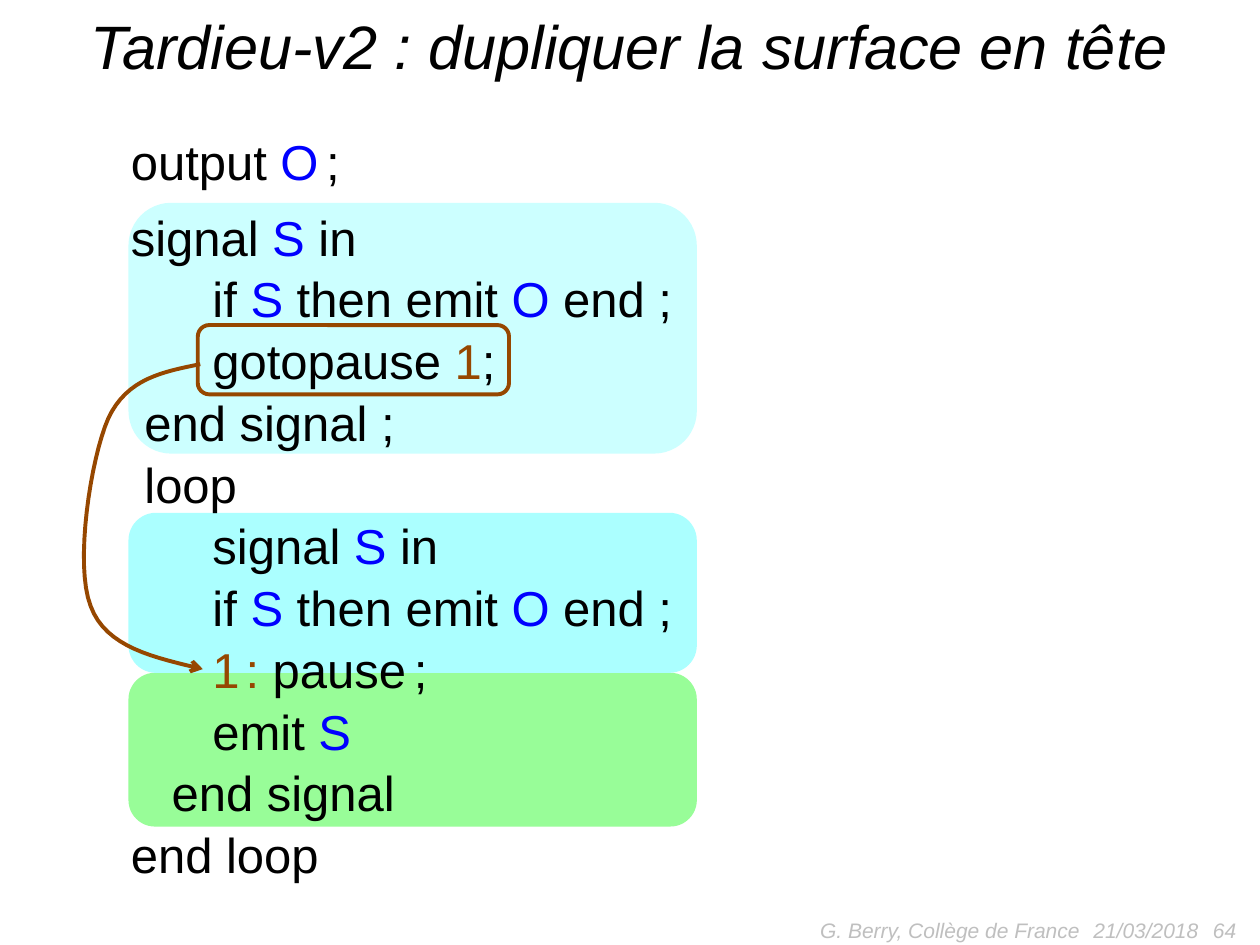
from lxml.etree import SubElement
from pptx import Presentation
from pptx.dml.color import RGBColor
from pptx.enum.shapes import MSO_SHAPE as Shape
from pptx.enum.text import MSO_ANCHOR as Anchor, MSO_AUTO_SIZE as AutoSize, PP_ALIGN as Align
from pptx.oxml.ns import qn
from pptx.util import Inches, Pt

BLACK, BLUE, BROWN, GREY = "000000", "0000FF", "964700", "BFBFBF"
TITLE = "Tardieu-v2 : dupliquer la surface en tête"
CODE_SIZE = 28
SPACE_WIDTH = 0.108
O, S, ONE = ("O", BLUE), ("S", BLUE), ("1", BROWN)
THIN = (" ", BLACK, 16)
CODE = [
    (0, ["output ", O, THIN, ";"]),
    (0, ["signal ", S, " in"]),
    (6, ["if ", S, " then emit ", O, " end ;"]),
    (6, ["gotopause ", ONE, ";"]),
    (1, ["end signal ;"]),
    (1, ["loop"]),
    (6, ["signal ", S, " in"]),
    (6, ["if ", S, " then emit ", O, " end ;"]),
    (6, [ONE, (" ", BROWN, 12), (":", BROWN), " pause", THIN, ";"]),
    (6, ["emit ", S]),
    (3, ["end signal"]),
    (0, ["end loop"]),
]
BLOCK_LEFT, BLOCK_WIDTH = 1.03, 4.49
BLOCKS = [(5.35, 1.2, "98FD98"), (4.08, 1.25, "ABFFFF"), (1.62, 1.97, "CCFFFF")]
FRAME = (1.57, 2.58, 2.47, 0.55)
JUMP = [
    (1.59, 2.89), (1.3, 2.95), (1.01, 3), (0.86, 3.32), (0.72, 3.64),
    (0.59, 4.48), (0.72, 4.81), (0.84, 5.14), (1.23, 5.22), (1.61, 5.31),
]
FOOTER = [
    ("G. Berry, Collège de France", 5.5, 3.17, Align.RIGHT),
    ("21/03/2018", 8.58, 1.33, Align.LEFT),
    ("64", 7.58, 2.33, Align.RIGHT),
]


def color(value):
    """Turn a hex string into a colour."""
    return RGBColor.from_string(value)


def add_span(para, text, size, shade=BLACK, italic=False):
    """Add a formatted run to a paragraph."""
    span = para.add_run()
    span.text = text
    for name, value in {"name": "Arial", "size": Pt(size), "italic": italic}.items():
        setattr(span.font, name, value)
    span.font.color.rgb = color(shade)


def set_frame(box, **options):
    """Apply text frame options and return the frame."""
    for name, value in {"word_wrap": True, **options}.items():
        setattr(box.text_frame, name, value)
    return box.text_frame


def style_outline(shape, shade, width):
    """Set an outline and drop the shadow."""
    shape.shadow.inherit = False
    shape.line.color.rgb = color(shade)
    shape.line.width = Pt(width)


def add_round_box(page, area, shade, width, filled):
    """Add a rounded rectangle, filled or as a frame only."""
    shape = page.shapes.add_shape(Shape.ROUNDED_RECTANGLE, *map(Inches, area))
    style_outline(shape, shade, width)
    if filled:
        shape.fill.solid()
        shape.fill.fore_color.rgb = color(shade)
    else:
        shape.fill.background()


def add_title(page):
    """Fill and place the title placeholder."""
    title = page.shapes.title
    area = zip(("left", "top", "width", "height"), (-0.08, 0.01, 10.15, 0.69))
    for name, value in area:
        setattr(title, name, Inches(value))
    frame = set_frame(title, auto_size=AutoSize.SHAPE_TO_FIT_TEXT)
    para = frame.paragraphs[0]
    para.alignment = Align.CENTER
    add_span(para, TITLE, 35, italic=True)


def add_code(page):
    """Write the program with its indents and coloured signals."""
    box = page.shapes.add_textbox(*map(Inches, (0.94, 0.97, 4.54, 6.15)))
    frame = set_frame(box, auto_size=AutoSize.SHAPE_TO_FIT_TEXT)
    for index, (indent, parts) in enumerate(CODE):
        para = frame.add_paragraph() if index else frame.paragraphs[0]
        para.line_spacing = 1.05
        para.space_after = Pt(0 if index else 8)
        para._p.get_or_add_pPr().set("marL", str(Inches(indent * SPACE_WIDTH)))
        for part in parts:
            text, shade, size = (*((part, BLACK) if isinstance(part, str) else part), CODE_SIZE)[:3]
            add_span(para, text, size, shade)


def curve_points(controls, steps=16):
    """Sample a chain of cubic Bezier curves."""
    points = [controls[0]]
    for start in range(0, len(controls) - 1, 3):
        corners = controls[start:start + 4]
        for step in range(1, steps + 1):
            t = step / steps
            weights = ((1 - t) ** 3, 3 * t * (1 - t) ** 2, 3 * t * t * (1 - t), t ** 3)
            points.append(tuple(
                sum(weight * corner[axis] for weight, corner in zip(weights, corners))
                for axis in (0, 1)))
    return points


def add_jump(page):
    """Draw the curved arrow from the goto to its label."""
    points = [(Inches(x), Inches(y)) for x, y in curve_points(JUMP)]
    builder = page.shapes.build_freeform(*points[0])
    builder.add_line_segments(points[1:], close=False)
    arrow = builder.convert_to_shape()
    style_outline(arrow, BROWN, 2.25)
    arrow.fill.background()
    SubElement(arrow.line._get_or_add_ln(), qn("a:tailEnd"), type="arrow")


def add_footer(page):
    """Write the author, date and page number."""
    for text, left, width, align in FOOTER:
        box = page.shapes.add_textbox(*map(Inches, (left, 7.18, width, 0.4)))
        para = set_frame(box, vertical_anchor=Anchor.MIDDLE).paragraphs[0]
        para.alignment = align
        add_span(para, text, 12, GREY, italic=True)


def main():
    """Build the slide and save it."""
    deck = Presentation()
    deck.slide_width, deck.slide_height = Inches(10), Inches(7.5)
    page = deck.slides.add_slide(deck.slide_layouts[5])
    for top, height, shade in BLOCKS:
        add_round_box(page, (BLOCK_LEFT, top, BLOCK_WIDTH, height), shade, 1.5, True)
    add_footer(page)
    add_title(page)
    add_code(page)
    add_jump(page)
    add_round_box(page, FRAME, BROWN, 2.25, False)
    deck.save("out.pptx")


if __name__ == "__main__":
    main()
